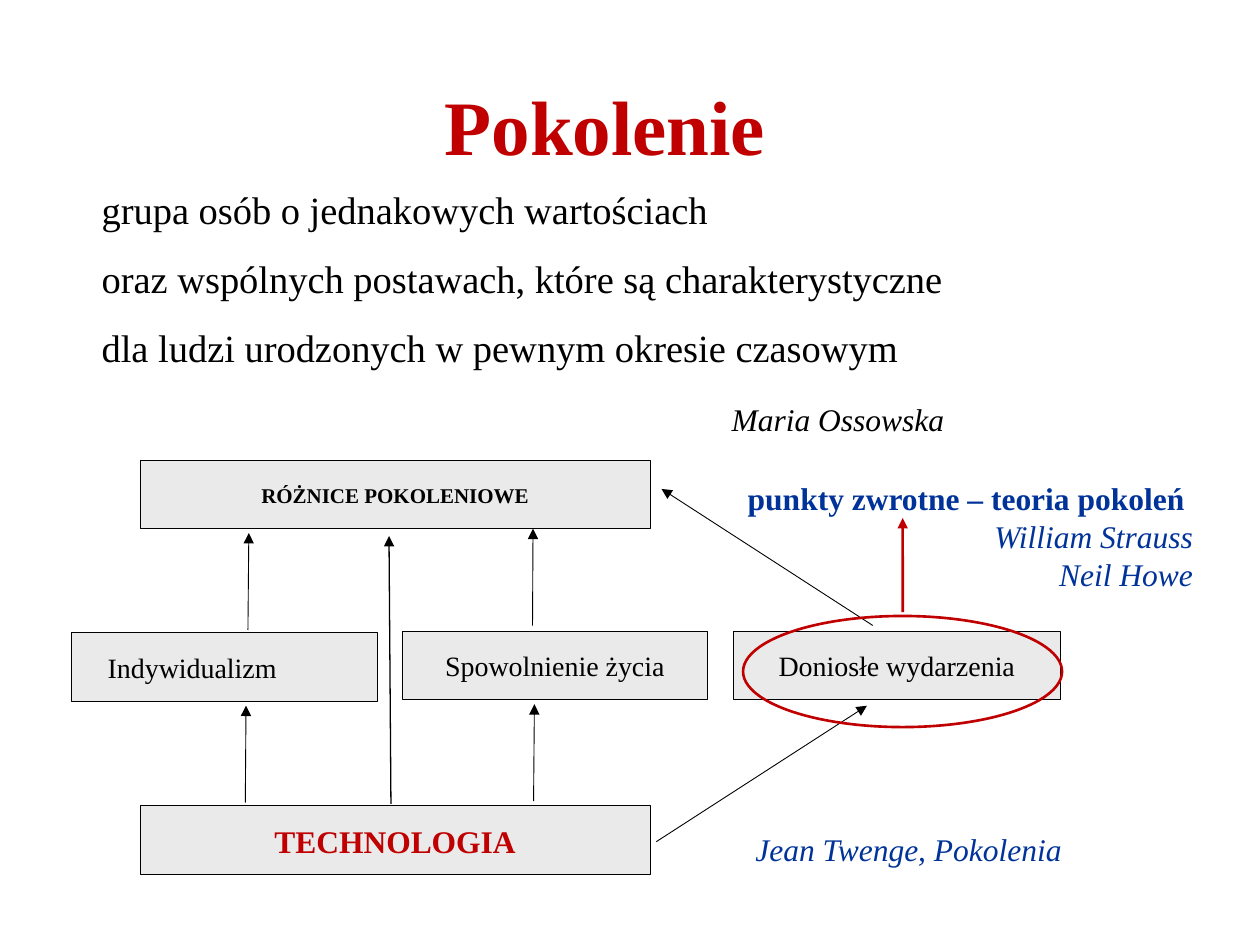
import pptx
import pptx.util
import pptx.dml.color
import pptx.enum.shapes
import pptx.enum.text
import pptx.oxml

Pt = pptx.util.Pt
SHAPE = pptx.enum.shapes.MSO_SHAPE
ALIGN = pptx.enum.text.PP_ALIGN
ANCHOR = pptx.enum.text.MSO_ANCHOR


def rgb(value):
    return pptx.dml.color.RGBColor.from_string(value)


def write(p, text, size=16, color="000000", bold=False, italic=False,
          align=ALIGN.LEFT, spacing=None, before=None, after=None, indent=None):
    p.alignment = align
    if spacing:
        p.line_spacing = spacing
    if before:
        p.space_before = Pt(before)
    if after:
        p.space_after = Pt(after)
    if indent:
        p._p.get_or_add_pPr().set("marL", str(Pt(indent)))
    for i, line in enumerate(text.split("\n")):
        if i:
            p.add_line_break()
        r = p.add_run()
        r.text = line
        r.font.name = Deck.font
        r.font.size = Pt(size)
        r.font.bold = bold
        r.font.italic = italic
        r.font.color.rgb = rgb(color)


class Deck:
    font = "Times New Roman"
    black = "000000"
    red = "C00000"
    blue = "003399"
    grey = "EAEAEA"

    def __init__(self):
        self.prs = pptx.Presentation()
        self.prs.slide_width = Pt(720)
        self.prs.slide_height = Pt(540)
        self.s = self.prs.slides.add_slide(self.prs.slide_layouts[5])

    def title(self, text, x, y, w, h):
        sp = self.s.shapes.title
        sp.left, sp.top, sp.width, sp.height = Pt(x), Pt(y), Pt(w), Pt(h)
        tf = sp.text_frame
        tf.vertical_anchor = ANCHOR.MIDDLE
        tf.auto_size = pptx.enum.text.MSO_AUTO_SIZE.NONE
        write(tf.paragraphs[0], text, 44, self.red, bold=True, align=ALIGN.CENTER)

    def text(self, x, y, w, h, *paragraphs, anchor=ANCHOR.TOP):
        tf = self.s.shapes.add_textbox(Pt(x), Pt(y), Pt(w), Pt(h)).text_frame
        tf.word_wrap = True
        tf.vertical_anchor = anchor
        for i, (text, fmt) in enumerate(paragraphs):
            write(tf.add_paragraph() if i else tf.paragraphs[0], text, **fmt)

    def shape(self, kind, x, y, w, h, fill, line, width):
        sp = self.s.shapes.add_shape(kind, Pt(x), Pt(y), Pt(w), Pt(h))
        sp.shadow.inherit = False
        if fill:
            sp.fill.solid()
            sp.fill.fore_color.rgb = rgb(fill)
        else:
            sp.fill.background()
        sp.line.color.rgb = rgb(line)
        sp.line.width = Pt(width)
        return sp

    def box(self, x, y, w, h, text="", **fmt):
        sp = self.shape(SHAPE.RECTANGLE, x, y, w, h, self.grey, self.black, 0.5)
        if text:
            tf = sp.text_frame
            tf.word_wrap = True
            tf.vertical_anchor = ANCHOR.MIDDLE
            write(tf.paragraphs[0], text, align=ALIGN.CENTER, spacing=1.07, after=8, **fmt)

    def oval(self, x, y, w, h):
        self.shape(SHAPE.OVAL, x, y, w, h, None, self.red, 1.5)

    def arrow(self, x1, y1, x2, y2, color=black, width=0.5):
        c = self.s.shapes.add_connector(
            pptx.enum.shapes.MSO_CONNECTOR.STRAIGHT, Pt(x1), Pt(y1), Pt(x2), Pt(y2))
        c.line.color.rgb = rgb(color)
        c.line.width = Pt(width)
        ns = pptx.oxml.ns.nsdecls("a")
        head = pptx.oxml.parse_xml(f'<a:tailEnd {ns} type="triangle"/>')
        c.line._get_or_add_ln().append(head)
        c._element.spPr.append(pptx.oxml.parse_xml(f"<a:effectLst {ns}/>"))


def main():
    d = Deck()
    d.title("Pokolenie", 200, 32.4, 291.6, 77.8)
    d.text(51, 89.3, 520.6, 167,
           ("grupa osób o jednakowych wartościach\n"
            "oraz wspólnych postawach, które są charakterystyczne\n"
            "dla ludzi urodzonych w pewnym okresie czasowym",
            dict(size=22, spacing=1.5)),
           ("Maria Ossowska",
            dict(size=18, italic=True, spacing=1.5, before=6, indent=360)))

    d.box(80, 263, 291.6, 39.2, "RÓŻNICE POKOLENIOWE", size=12, bold=True)
    d.box(80, 460.3, 291.6, 39.5, "TECHNOLOGIA", size=18, color=d.red, bold=True)
    d.box(229.7, 360.7, 174.8, 39)
    d.box(418.9, 360.7, 187.2, 39)
    d.box(40.7, 361.3, 174.8, 39.4)
    middle = dict(anchor=ANCHOR.MIDDLE)
    centered = dict(align=ALIGN.CENTER)
    d.text(229.7, 360.7, 174.8, 39, ("Spowolnienie życia", centered), **middle)
    d.text(418.9, 360.7, 187.2, 39, ("Doniosłe wydarzenia", centered), **middle)
    d.text(54.4, 363.9, 157.7, 35.3, ("Indywidualizm", {}), **middle)

    d.arrow(223.4, 459.4, 222.3, 306.3, width=0.75)
    for x, y, shift in ((140.2, 458.6, 0.4), (141.7, 360, 0.5),
                        (304.9, 457.8, 0.5), (304.3, 357.5, 0.3)):
        d.arrow(x, y, x + shift, y - 55.4)
    d.arrow(375, 481, 495.4, 403.3)
    d.arrow(498.7, 357.4, 378, 279.4)

    d.text(424.6, 471, 197.3, 29,
           ("Jean Twenge, Pokolenia", dict(size=18, color=d.blue, italic=True)))
    d.text(420.2, 270.2, 268.6, 72.7,
           ("punkty zwrotne – teoria pokoleń", dict(size=18, color=d.blue, bold=True)),
           ("William Strauss\nNeil Howe",
            dict(size=18, color=d.blue, italic=True, align=ALIGN.RIGHT)))
    d.arrow(515.9, 349.8, 515.8, 296, d.red, 1.5)
    d.oval(424.6, 352, 182.3, 63.5)
    d.prs.save("out.pptx")


if __name__ == "__main__":
    main()
